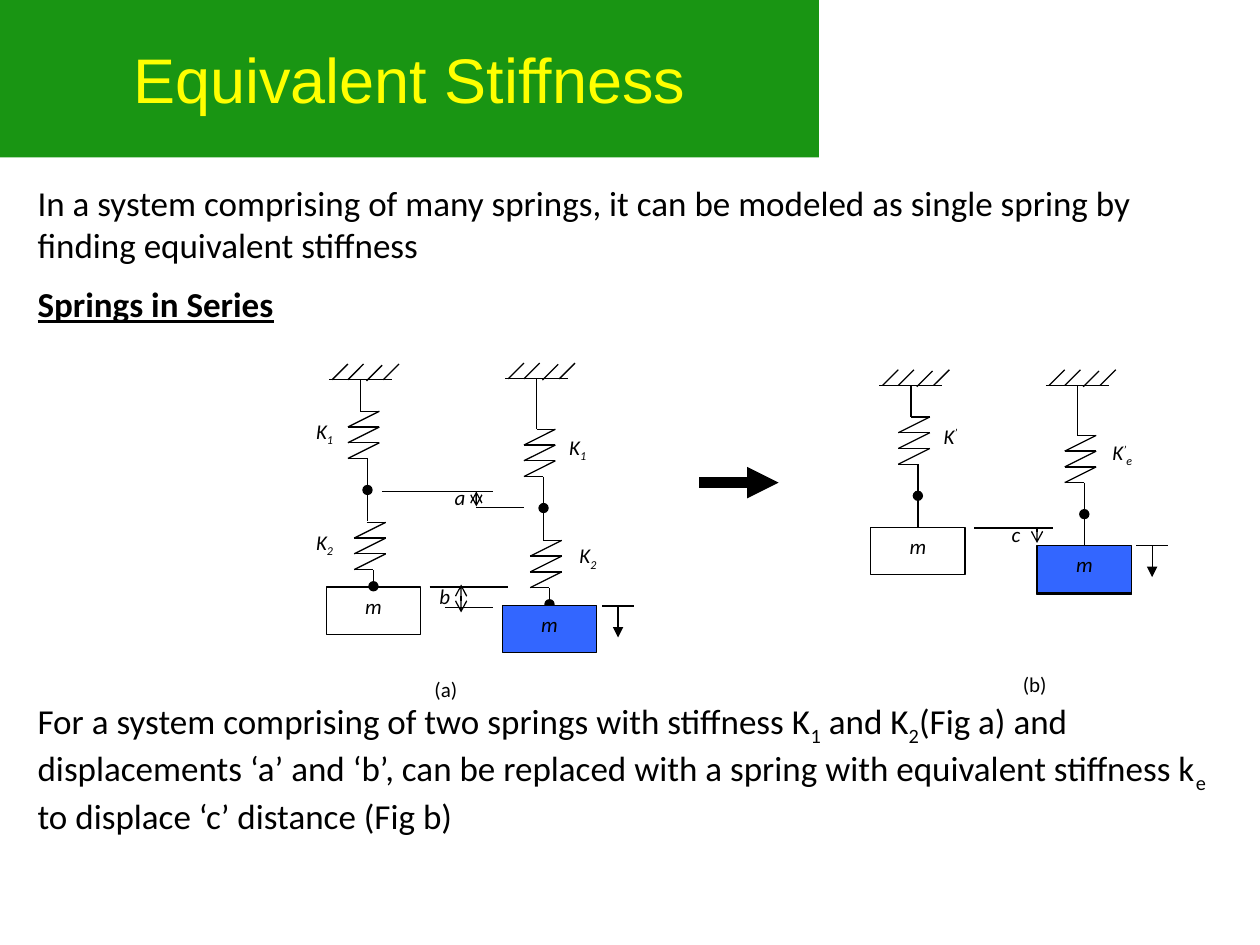
from itertools import pairwise

from lxml.etree import SubElement
from pptx import Presentation
from pptx.dml.color import RGBColor
from pptx.enum.shapes import MSO_CONNECTOR, MSO_SHAPE
from pptx.enum.text import MSO_ANCHOR, PP_ALIGN
from pptx.oxml.ns import qn
from pptx.util import Pt

GREEN = RGBColor(0x19, 0x95, 0x13)
YELLOW = RGBColor(0xFF, 0xFF, 0x00)
BLUE = RGBColor(0x33, 0x66, 0xFF)
BLACK = RGBColor(0, 0, 0)

SUB, SUPER = -25000, 30000
MASS_W, MASS_H = 54, 27
ZIGZAG = [(7.2, 0), (18, 0), (0, 9), (18, 9), (0, 18), (18, 18), (0, 27), (11, 27)]


def add_line(s, x1, y1, x2, y2, head=None, tail=None, width=0.75):
    ln = s.shapes.add_connector(MSO_CONNECTOR.STRAIGHT, Pt(x1), Pt(y1), Pt(x2), Pt(y2))
    ln.line.color.rgb = BLACK
    ln.line.width = Pt(width)
    props = ln.line._get_or_add_ln()
    for tag, kind in (("a:headEnd", head), ("a:tailEnd", tail)):
        if kind:
            SubElement(props, qn(tag)).set("type", kind)
    SubElement(ln._element.spPr, qn("a:effectLst"))


def add_rect(s, x, y, w, h, fill=None, outline=None):
    sp = s.shapes.add_shape(MSO_SHAPE.RECTANGLE, Pt(x), Pt(y), Pt(w), Pt(h))
    sp.shadow.inherit = False
    if fill is None:
        sp.fill.background()
    else:
        sp.fill.solid()
        sp.fill.fore_color.rgb = fill
    if outline is None:
        sp.line.fill.background()
    else:
        sp.line.color.rgb = outline
        sp.line.width = Pt(0.75)
    return sp


def add_textbox(s, x, y, w, h):
    tf = s.shapes.add_textbox(Pt(x), Pt(y), Pt(w), Pt(h)).text_frame
    tf.word_wrap = True
    return tf


def write(p, parts, size, italic=False):
    """Fill a paragraph from (text, baseline shift) pairs."""
    for text, shift in parts:
        r = p.add_run()
        r.text = text
        r.font.name = "Calibri"
        r.font.size = Pt(size)
        r.font.color.rgb = BLACK
        r.font.italic = italic
        if shift:
            r._r.get_or_add_rPr().set("baseline", str(shift))


def add_label(s, x, y, *parts, w=27, italic=True):
    tf = add_textbox(s, x, y, w, 27)
    write(tf.paragraphs[0], parts, 12, italic)


def add_title(s, x, y, w, h):
    tf = add_rect(s, x, y, w, h, GREEN).text_frame
    tf.text = "Equivalent Stiffness"
    tf.vertical_anchor = MSO_ANCHOR.MIDDLE
    p = tf.paragraphs[0]
    p.alignment = PP_ALIGN.CENTER
    p.font.name = "Arial"
    p.font.size = Pt(36)
    p.font.color.rgb = YELLOW


def add_body(s, x, y, w, h):
    tf = add_textbox(s, x, y, w, h)
    write(tf.paragraphs[0], [(
        "In a system comprising of many springs, it can be modeled as single "
        "spring by finding equivalent stiffness", 0)], 20)

    heading = tf.add_paragraph()
    heading.space_before = Pt(10)
    write(heading, [("Springs in Series", 0)], 20)
    font = heading.runs[0].font
    font.bold = font.underline = True

    p = tf.add_paragraph()
    p.space_before = Pt(214)  # room for the figures
    write(p, [
        ("For a system comprising of two springs with stiffness K", 0), ("1", SUB),
        (" and K", 0), ("2", SUB),
        ("(Fig a) and displacements ‘a’ and ‘b’, can be replaced with a spring "
         "with equivalent stiffness k", 0), ("e", SUB),
        (" to displace ‘c’ distance (Fig b)", 0)], 20)


def add_ceiling(s, x, y):
    add_line(s, x, y, x + 36, y)
    for dx, dy in ((1.8, 0), (10.8, 0), (21.4, 0.7), (31, 0)):
        add_line(s, x + dx, y + dy, x + dx + 9, y + dy - 9)


def add_spring(s, x, y):
    for (x1, y1), (x2, y2) in pairwise(ZIGZAG):
        add_line(s, x + x1, y + y1, x + x2, y + y2)


def add_mass(s, x, y, fill=None):
    p = add_rect(s, x, y, MASS_W, MASS_H, fill, BLACK).text_frame
    p.vertical_anchor = MSO_ANCHOR.TOP
    p = p.paragraphs[0]
    p.alignment = PP_ALIGN.CENTER
    write(p, [("m", 0)], 12, italic=True)


def add_system(s, x, y, hanger, two_springs, fill=None):
    """Hang a mass from a ceiling at x, y on one spring or on two in series."""
    add_ceiling(s, x, y)
    add_line(s, x + 18, y, x + 18, y + hanger)
    x, y = x + 10.8, y + hanger
    add_spring(s, x, y)
    rod = x + 11.2
    add_line(s, rod, y + 27, rod, y + 45, tail="oval")
    add_line(s, rod, y + 45, rod, y + 63)
    y += 63
    if two_springs:
        add_spring(s, x + 3.6, y + 0.5)
        rod += 3.4
        add_line(s, rod, y + 28, rod, y + 37, tail="oval")
        y += 37.5
    add_mass(s, rod - MASS_W / 2, y, fill)


def add_motion_mark(s, x, y):
    add_line(s, x, y, x + 18, y)
    add_line(s, x + 9, y, x + 9, y + 18, tail="triangle")


def add_series_figure(s, x, y):
    add_system(s, x, y, 18, True)
    add_system(s, x + 100.6, y - 0.5, 28.8, True, BLUE)

    for dx, dy, number in ((-14.5, 18.4, "1"), (-14.5, 81.8, "2"),
                           (130.2, 27.8, "1"), (136, 89.7, "2")):
        add_label(s, x + dx, y + dy, ("K", 0), (number, SUB))
    add_label(s, x + 64.7, y + 56.6, ("a", 0))
    add_label(s, x + 56, y + 112.8, ("b", 0))

    for left, right, dy in ((30.2, 93.5, 63.8), (84.2, 111.5, 73.2),
                            (57.5, 102.2, 118.5), (66.2, 93.5, 130)):
        add_line(s, x + left, y + dy, x + right, y + dy)
    for dx, top, bottom in ((84.2, 63.8, 72.4), (75.5, 117, 133)):
        add_line(s, x + dx, y + top, x + dx, y + bottom, "arrow", "arrow")
    add_motion_mark(s, x + 156.2, y + 129.3)
    add_label(s, x + 53.2, y + 166, ("(a)", 0), w=45, italic=False)


def add_equivalent_figure(s, x, y):
    add_system(s, x, y, 18, False)
    add_rect(s, x + 90.1, y + 92.4, MASS_W, MASS_H, outline=BLACK)
    add_system(s, x + 95.1, y, 28.5, False, BLUE)

    add_label(s, x + 29.6, y + 18, ("K", 0), ("’", SUPER))
    add_label(s, x + 126.1, y + 27.4, ("K", 0), ("’", SUPER), ("e", SUB), w=40)
    add_label(s, x + 68.5, y + 74.2, ("c", 0))

    add_line(s, x + 54.1, y + 81.4, x + 99.4, y + 81.4)
    add_line(s, x + 90.1, y + 81.4, x + 90.1, y + 90, tail="arrow")
    add_motion_mark(s, x + 146.9, y + 91.5)
    add_label(s, x + 74.9, y + 159.9, ("(b)", 0), w=45, italic=False)


def main():
    prs = Presentation()
    prs.slide_width, prs.slide_height = Pt(720), Pt(540)
    s = prs.slides.add_slide(prs.slide_layouts[6])
    add_title(s, 0, 0, 468, 90)
    add_body(s, 14.4, 100, 686, 391)
    add_series_figure(s, 188, 217)
    add_equivalent_figure(s, 502.5, 220.3)
    add_line(s, 399.6, 275.8, 445, 275.8, tail="triangle", width=6)
    prs.save("out.pptx")


if __name__ == "__main__":
    main()
